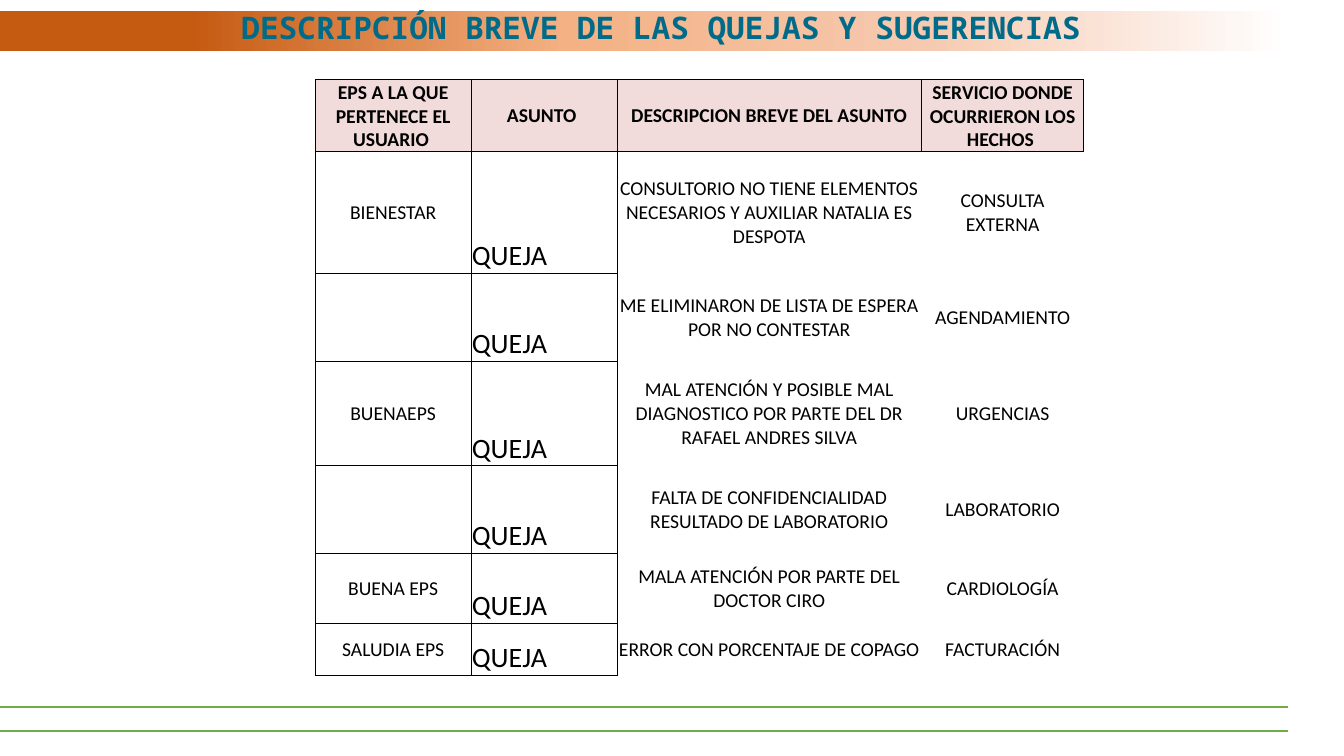
from lxml import etree
from pptx import Presentation
from pptx.dml.color import RGBColor
from pptx.enum.shapes import MSO_CONNECTOR, MSO_SHAPE
from pptx.enum.text import MSO_ANCHOR, PP_ALIGN
from pptx.oxml import parse_xml
from pptx.oxml.ns import nsdecls, qn
from pptx.util import Inches, Pt

COLORS = {
    "title": "006B89", "rule": "70AD47", "header": "F2DCDB", "text": "000000",
    "dark": "C55A11", "orange": "F4B183", "peach": "F6CAB1", "white": "FFFFFF",
}
BANNER_STOPS = [(14, "dark"), (42, "orange"), (69, "peach"), (96, "white")]

HEADERS = ["EPS A LA QUE PERTENECE EL USUARIO ", "ASUNTO ",
           "DESCRIPCION BREVE DEL ASUNTO", "SERVICIO DONDE OCURRIERON LOS HECHOS "]
COMPLAINTS = [
    ("BIENESTAR", "QUEJA",
     "CONSULTORIO NO TIENE ELEMENTOS NECESARIOS Y AUXILIAR NATALIA ES DESPOTA",
     "CONSULTA EXTERNA"),
    ("", "QUEJA", "ME ELIMINARON DE LISTA DE ESPERA POR NO CONTESTAR", "AGENDAMIENTO"),
    ("BUENAEPS", "QUEJA",
     "MAL ATENCIÓN Y POSIBLE MAL DIAGNOSTICO POR PARTE DEL DR RAFAEL ANDRES SILVA",
     "URGENCIAS"),
    ("", "QUEJA", "FALTA DE CONFIDENCIALIDAD RESULTADO DE LABORATORIO", "LABORATORIO"),
    ("BUENA EPS", "QUEJA", "MALA ATENCIÓN POR PARTE DEL DOCTOR CIRO", "CARDIOLOGÍA"),
    ("SALUDIA EPS", "QUEJA", "ERROR CON PORCENTAJE DE COPAGO", "FACTURACIÓN"),
]
COL_WIDTHS = [1.54, 1.45, 3.02, 1.61]
ROW_HEIGHTS = [0.71, 1.21, 0.87, 1.04, 0.87, 0.69, 0.52]


def rgb(name):
    return RGBColor.from_string(COLORS[name])


def set_font(p, name, size, color, bold=False):
    p.font.name = name
    p.font.size = Pt(size)
    p.font.bold = bold
    p.font.color.rgb = rgb(color)


def add_rule(s, y):
    line = s.shapes.add_connector(MSO_CONNECTOR.STRAIGHT, Inches(0), Inches(y),
                                  Inches(12.77), Inches(y))
    line.line.color.rgb = rgb("rule")
    line.line.width = Pt(1.5)
    etree.SubElement(line._element.spPr, qn("a:effectLst"))


def add_banner(s):
    sp = s.shapes.add_shape(MSO_SHAPE.RECTANGLE, Inches(0), Inches(0.11),
                            Inches(13.33), Inches(0.4))
    sp.shadow.inherit = False
    sp.line.fill.background()
    stops = "".join(f'<a:gs pos="{pos * 1000}"><a:srgbClr val="{COLORS[name]}"/></a:gs>'
                    for pos, name in BANNER_STOPS)
    sp._element.spPr.find(qn("a:prstGeom")).addnext(parse_xml(
        f'<a:gradFill {nsdecls("a")}><a:gsLst>{stops}</a:gsLst>'
        '<a:lin ang="0" scaled="0"/></a:gradFill>'))


def add_title(s, text):
    tf = s.shapes.add_textbox(Inches(0.42), Inches(0.11),
                              Inches(12.46), Inches(0.4)).text_frame
    tf.word_wrap = True
    p = tf.paragraphs[0]
    p.text = text
    p.alignment = PP_ALIGN.CENTER
    p.line_spacing = 0.8
    set_font(p, "Noto Sans Mono", 22.2, "title", bold=True)


def set_borders(cell, sides):
    tcPr = cell._tc.get_or_add_tcPr()
    for side in "LRTB":
        ln = etree.SubElement(tcPr, qn(f"a:ln{side}"), w=str(Pt(0.5)))
        if side in sides:
            fill = etree.SubElement(ln, qn("a:solidFill"))
            etree.SubElement(fill, qn("a:srgbClr"), val=COLORS["text"])
        else:
            etree.SubElement(ln, qn("a:noFill"))


def border_sides(row, col):
    if row == 0 or col < 2:
        return "LRTB"
    return ("L" if col == 2 else "") + ("T" if row == 1 else "")


def fill_cell(cell, text, row, col):
    is_subject = row > 0 and col == 1
    cell.margin_left = cell.margin_right = cell.margin_top = Inches(0.01)
    cell.margin_bottom = 0
    cell.vertical_anchor = MSO_ANCHOR.BOTTOM if is_subject else MSO_ANCHOR.MIDDLE
    p = cell.text_frame.paragraphs[0]
    p.text = text
    p.alignment = PP_ALIGN.LEFT if is_subject else PP_ALIGN.CENTER
    set_font(p, "Calibri", 20 if is_subject else 14, "text", bold=row == 0)
    set_borders(cell, border_sides(row, col))
    if row == 0:
        cell.fill.solid()
        cell.fill.fore_color.rgb = rgb("header")
    else:
        cell.fill.background()


def add_complaints_table(s):
    rows = [HEADERS, *COMPLAINTS]
    table = s.shapes.add_table(len(rows), len(HEADERS), Inches(3.13), Inches(0.79),
                               Inches(sum(COL_WIDTHS)), Inches(sum(ROW_HEIGHTS))).table
    table.first_row = table.horz_banding = False
    for column, width in zip(table.columns, COL_WIDTHS):
        column.width = Inches(width)
    for row, (texts, height) in enumerate(zip(rows, ROW_HEIGHTS)):
        table.rows[row].height = Inches(height)
        for col, text in enumerate(texts):
            fill_cell(table.cell(row, col), text, row, col)


def main():
    prs = Presentation()
    prs.slide_width, prs.slide_height = Inches(13.33), Inches(7.5)
    s = prs.slides.add_slide(prs.slide_layouts[6])

    # Banner and footer rules
    add_rule(s, 7.25)
    add_banner(s)
    add_rule(s, 7.01)

    # Content
    add_title(s, "DESCRIPCIÓN BREVE DE LAS QUEJAS Y SUGERENCIAS ")
    add_complaints_table(s)

    prs.save("out.pptx")


if __name__ == "__main__":
    main()
